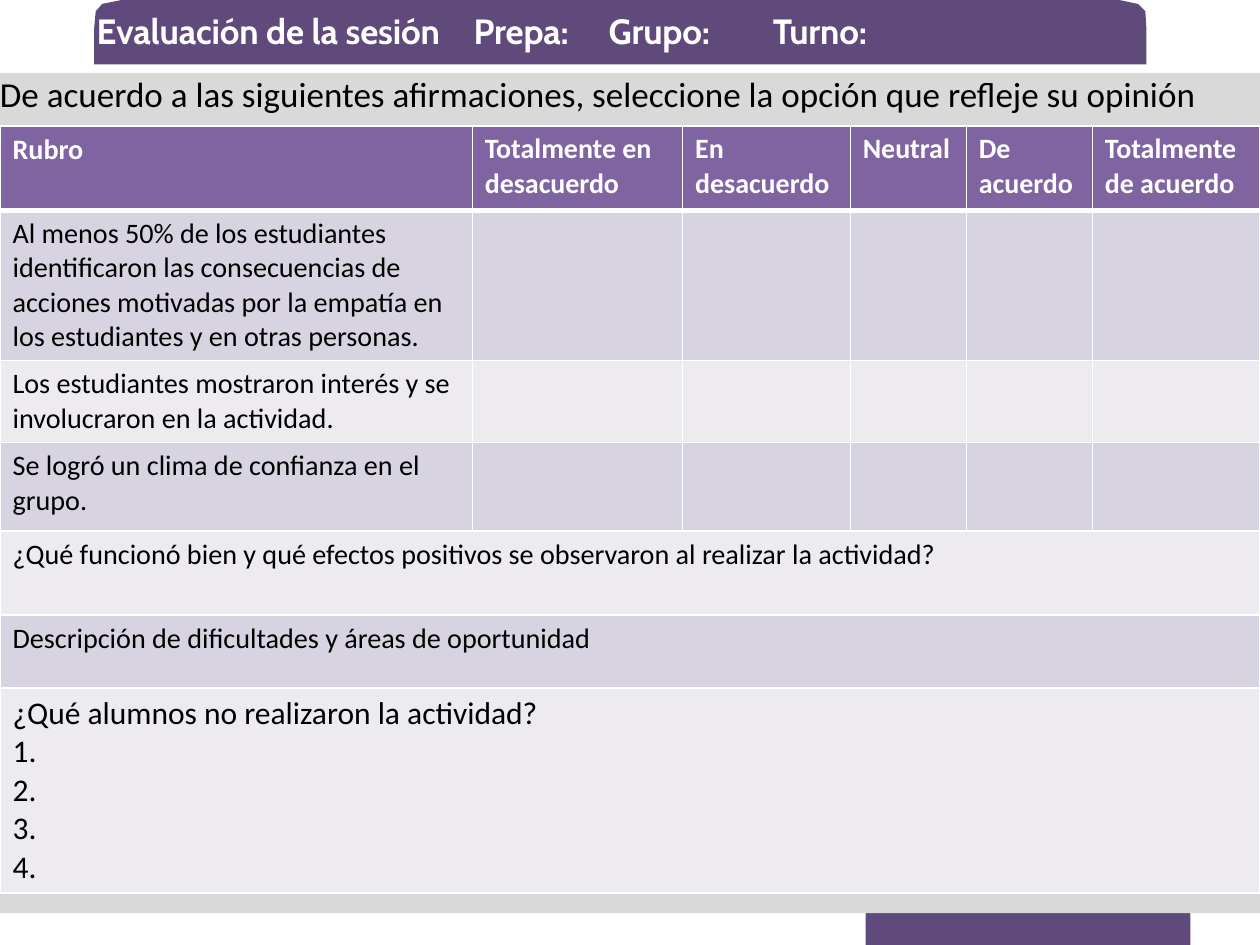
from lxml import etree
from pptx import Presentation
from pptx.dml.color import RGBColor
from pptx.enum.shapes import MSO_SHAPE
from pptx.enum.text import MSO_ANCHOR, MSO_AUTO_SIZE, PP_ALIGN
from pptx.oxml.ns import qn
from pptx.util import Cm, Pt

RECT = MSO_SHAPE.RECTANGLE
LEFT, TOP = PP_ALIGN.LEFT, MSO_ANCHOR.TOP
NO_FIT = MSO_AUTO_SIZE.NONE

COLORS = {
    "purple": "604A7B", "panel": "D9D9D9", "head": "8064A2",
    "dark_band": "D8D3E0", "light_band": "EDEAF0",
    "white": "FFFFFF", "black": "000000",
}

TITLE = ["Evaluación de la sesión", "Prepa:", "Grupo:", "Turno:"]
TITLE_TABS = [7.6, 10.32, 13.63]
INSTRUCTION = ("De acuerdo a las siguientes afirmaciones, "
               "seleccione la opción que refleje su opinión")
HEADER = ["Rubro", "Totalmente en desacuerdo", "En desacuerdo", "Neutral",
          "De acuerdo", "Totalmente de acuerdo"]
STATEMENTS = [
    "Al menos 50% de los estudiantes identificaron las consecuencias de "
    "acciones motivadas por la empatía en los estudiantes y en otras personas.",
    "Los estudiantes mostraron interés y se involucraron en la actividad.",
    "Se logró un clima de confianza en el grupo.",
]
QUESTIONS = [
    ["¿Qué funcionó bien y qué efectos positivos se observaron al realizar la actividad?"],
    ["Descripción de dificultades y áreas de oportunidad"],
    ["¿Qué alumnos no realizaron la actividad?", "1.", "2.", "3.", "4."],
]
COL_WIDTHS = [9.52, 4.24, 3.38, 2.34, 2.54, 3.38]
ROW_HEIGHTS = [1.7, 2.97, 1.65, 1.78, 1.7, 1.47, 4.06]
BANNER = [(21.79, 0), (3.23, 0), (2.46, 0), (2.06, 0.08), (1.93, 0.23),
          (1.9, 0.56), (1.9, 1.3), (23.11, 1.3), (23.11, 0.56),
          (23.09, 0.23), (22.94, 0.08), (22.56, 0)]


def rgb(name):
    return RGBColor.from_string(COLORS[name])


def paint(sp, color):
    sp.shadow.inherit = False
    sp.fill.solid()
    sp.fill.fore_color.rgb = rgb(color)
    sp.line.fill.background()


def add_run(p, text, size, color, font="Calibri", bold=False):
    r = p.add_run()
    r.text = text
    r.font.name, r.font.size, r.font.bold = font, Pt(size), bold
    r.font.color.rgb = rgb(color)
    return r


def set_frame(tf, left=0, top=0):
    tf.margin_left, tf.margin_top = Cm(left), Cm(top)
    tf.margin_right = tf.margin_bottom = 0
    tf.word_wrap = True
    tf.auto_size = NO_FIT
    tf.vertical_anchor = TOP
    p = tf.paragraphs[0]
    p.alignment = LEFT
    return p


def add_box(s, x, y, w, h, color):
    sp = s.shapes.add_shape(RECT, Cm(x), Cm(y), Cm(w), Cm(h))
    paint(sp, color)
    return sp


def add_banner(s):
    points = [(Cm(x), Cm(y)) for x, y in BANNER]
    builder = s.shapes.build_freeform(*points[0])
    builder.add_line_segments(points[1:], close=True)
    paint(builder.convert_to_shape(), "purple")


def set_title(s):
    """Place the title over the banner, its fields lined up on tab stops."""
    sp = s.shapes.title
    sp.left, sp.top, sp.width, sp.height = Cm(1.9), Cm(0.15), Cm(21.4), Cm(0.9)
    sp.element.getparent().append(sp.element)
    p = set_frame(sp.text_frame, 0.05, 0.05)
    p.space_before = Pt(1.2)
    r = add_run(p, "\t".join(TITLE), 20, "white", "Cabin", True)
    r.font._element.set("spc", "-10")
    tabs = etree.SubElement(p._p.get_or_add_pPr(), qn("a:tabLst"))
    for pos in TITLE_TABS:
        etree.SubElement(tabs, qn("a:tab"), pos=str(Cm(pos)), algn="l")


def set_borders(cell, bottom):
    tc_pr = cell._tc.get_or_add_tcPr()
    for i, (side, width) in enumerate(zip("LRTB", (1, 1, 1, bottom))):
        ln = etree.Element(qn(f"a:ln{side}"), w=str(Pt(width)))
        fill = etree.SubElement(ln, qn("a:solidFill"))
        etree.SubElement(fill, qn("a:srgbClr"), val=COLORS["white"])
        tc_pr.insert(i, ln)


def fill_cell(cell, lines, size, color="black", bold=False):
    tf = cell.text_frame
    for i, line in enumerate(lines):
        p = tf.add_paragraph() if i else tf.paragraphs[0]
        add_run(p, line, size, color, bold=bold)


def add_rubric(s):
    tbl = s.shapes.add_table(len(ROW_HEIGHTS), len(COL_WIDTHS), 0, Cm(2.54),
                             Cm(sum(COL_WIDTHS)), Cm(sum(ROW_HEIGHTS))).table
    for col, width in zip(tbl.columns, COL_WIDTHS):
        col.width = Cm(width)
    for i, (row, height) in enumerate(zip(tbl.rows, ROW_HEIGHTS)):
        row.height = Cm(height)
        band = "head" if i == 0 else "dark_band" if i % 2 else "light_band"
        for cell in row.cells:
            cell.fill.solid()
            cell.fill.fore_color.rgb = rgb(band)
            set_borders(cell, 1 if i else 3)

    for j, text in enumerate(HEADER):
        fill_cell(tbl.cell(0, j), [text], 16 if j else 16.1, "white", True)
    for i, text in enumerate(STATEMENTS, 1):
        fill_cell(tbl.cell(i, 0), [text], 16.1)
    for i, lines in enumerate(QUESTIONS, 1 + len(STATEMENTS)):
        cell = tbl.cell(i, 0)
        cell.merge(tbl.cell(i, len(COL_WIDTHS) - 1))
        fill_cell(cell, lines, 18 if len(lines) > 1 else 16.1)


def main():
    prs = Presentation()
    prs.slide_width, prs.slide_height = Cm(25.4), Cm(19.05)
    s = prs.slides.add_slide(prs.slide_layouts[5])
    add_box(s, 17.45, 18.03, 6.55, 1.07, "purple")
    panel = add_box(s, 0, 1.47, 25.4, 16.94, "panel")
    add_run(set_frame(panel.text_frame), INSTRUCTION, 20, "black")
    add_banner(s)
    set_title(s)
    add_rubric(s)
    prs.save("out.pptx")


if __name__ == "__main__":
    main()
